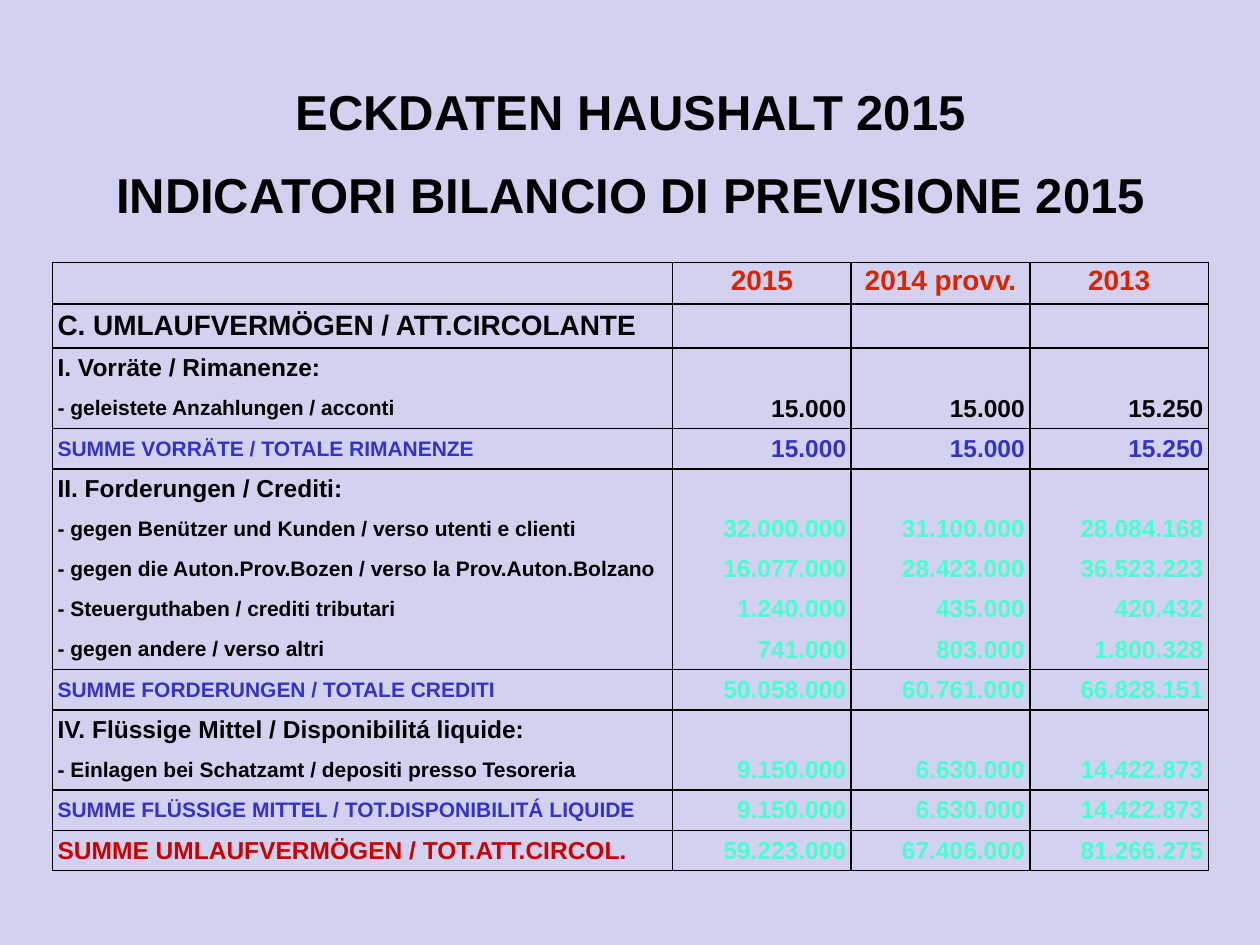
from lxml import etree
from pptx import Presentation
from pptx import util as u
from pptx.dml.color import RGBColor
from pptx.enum import text
from pptx.oxml.ns import qn

BLACK, BLUE, RED, ORANGE, MINT = "000000", "3333CC", "CC0000", "DC2300", "47FFD1"
LEFT, CENTER, RIGHT = text.PP_ALIGN.LEFT, text.PP_ALIGN.CENTER, text.PP_ALIGN.RIGHT

YEARS = ["2015", "2014 provv.", "2013"]
# Row kind: (label size, label colour, line above, line below)
KINDS = {
    "chapter": (16, BLACK, True, True),
    "heading": (14, BLACK, True, False),
    "item": (12, BLACK, False, False),
    "last item": (12, BLACK, False, True),
    "sum": (12, BLUE, True, True),
    "total": (14, RED, True, True),
}
# Row kind, label, value colour, one value per year
ROWS = [
    ("chapter", "C. UMLAUFVERMÖGEN / ATT.CIRCOLANTE", BLACK, ""),
    ("heading", "I. Vorräte / Rimanenze:", BLACK, ""),
    ("last item", "- geleistete Anzahlungen / acconti", BLACK, "15.000 15.000 15.250"),
    ("sum", "SUMME VORRÄTE / TOTALE RIMANENZE", BLUE, "15.000 15.000 15.250"),
    ("heading", "II. Forderungen / Crediti:", BLACK, ""),
    ("item", "- gegen Benützer und Kunden / verso utenti e clienti", MINT,
     "32.000.000 31.100.000 28.084.168"),
    ("item", "- gegen die Auton.Prov.Bozen / verso la Prov.Auton.Bolzano", MINT,
     "16.077.000 28.423.000 36.523.223"),
    ("item", "- Steuerguthaben / crediti tributari", MINT, "1.240.000 435.000 420.432"),
    ("last item", "- gegen andere / verso altri", MINT, "741.000 803.000 1.800.328"),
    ("sum", "SUMME FORDERUNGEN / TOTALE CREDITI", MINT, "50.058.000 60.761.000 66.828.151"),
    ("heading", "IV. Flüssige Mittel / Disponibilitá liquide:", BLACK, ""),
    ("last item", "- Einlagen bei Schatzamt / depositi presso Tesoreria", MINT,
     "9.150.000 6.630.000 14.422.873"),
    ("sum", "SUMME FLÜSSIGE MITTEL / TOT.DISPONIBILITÁ LIQUIDE", MINT,
     "9.150.000 6.630.000 14.422.873"),
    ("total", "SUMME UMLAUFVERMÖGEN / TOT.ATT.CIRCOL.", MINT, "59.223.000 67.406.000 81.266.275"),
]


def color(value):
    return RGBColor.from_string(value)


def write(paragraph, content, size=14, fill=BLACK, align=LEFT, before=None, spacing=None):
    paragraph.alignment = align
    if before:
        paragraph.space_before = u.Pt(before)
    if spacing:
        paragraph.line_spacing = spacing
    if not content:
        # The end mark keeps an empty cell from growing its row
        etree.SubElement(paragraph._p, qn("a:endParaRPr"), sz=str(size * 100))
        return
    run = paragraph.add_run()
    run.text = content
    run.font.name = "Arial"
    run.font.size = u.Pt(size)
    run.font.bold = True
    run.font.color.rgb = color(fill)


def set_borders(cell, above, below):
    properties = cell._tc.get_or_add_tcPr()
    for side, visible in (("L", True), ("R", True), ("T", above), ("B", below)):
        line = etree.SubElement(properties, qn("a:ln" + side), w=str(u.Pt(1)))
        if visible:
            fill = etree.SubElement(line, qn("a:solidFill"))
            etree.SubElement(fill, qn("a:srgbClr"), val=BLACK)
        else:
            etree.SubElement(line, qn("a:noFill"))


def fill_cell(cell, content, above=True, below=True, **style):
    cell.margin_left = cell.margin_right = u.Cm(0.1)
    cell.margin_top = cell.margin_bottom = u.Cm(0.1)
    cell.vertical_anchor = text.MSO_ANCHOR.MIDDLE
    set_borders(cell, above, below)
    cell.fill.background()
    write(cell.text_frame.paragraphs[0], content, **style)


def add_title(slide):
    box = slide.shapes.add_textbox(u.Cm(1.98), u.Cm(1.52), u.Cm(21.46), u.Cm(3.07))
    frame = box.text_frame
    frame.word_wrap = False
    write(frame.paragraphs[0], "ECKDATEN HAUSHALT 2015", size=28, align=CENTER)
    write(frame.add_paragraph(), "INDICATORI BILANCIO DI PREVISIONE 2015",
          size=28, align=CENTER, before=13.5)


def add_balance_table(slide):
    widths = [12.5] + [3.6] * len(YEARS)
    heights = [0.84, 0.89] + [0.81] * (len(ROWS) - 1)
    table = slide.shapes.add_table(len(heights), len(widths), u.Cm(1.06), u.Cm(5.29),
                                   u.Cm(sum(widths)), u.Cm(sum(heights))).table
    table.first_row = table.horz_banding = False
    for column, width in zip(table.columns, widths):
        column.width = u.Cm(width)
    for row, height in zip(table.rows, heights):
        row.height = u.Cm(height)

    fill_cell(table.cell(0, 0), "")
    for column, year in enumerate(YEARS, 1):
        fill_cell(table.cell(0, column), year, size=16, fill=ORANGE, align=CENTER,
                  before=8, spacing=0.81)
    for row, (kind, label, value_color, values) in enumerate(ROWS, 1):
        size, label_color, above, below = KINDS[kind]
        fill_cell(table.cell(row, 0), label, above, below, size=size, fill=label_color)
        for column, value in enumerate(values.split() or [""] * len(YEARS), 1):
            fill_cell(table.cell(row, column), value, above, below,
                      fill=value_color, align=RIGHT)


def main():
    deck = Presentation()
    deck.slide_width, deck.slide_height = u.Cm(25.4), u.Cm(19.05)
    slide = deck.slides.add_slide(deck.slide_layouts[6])
    slide.background.fill.solid()
    slide.background.fill.fore_color.rgb = color("D2D2F0")
    add_title(slide)
    add_balance_table(slide)
    deck.save("out.pptx")


if __name__ == "__main__":
    main()
